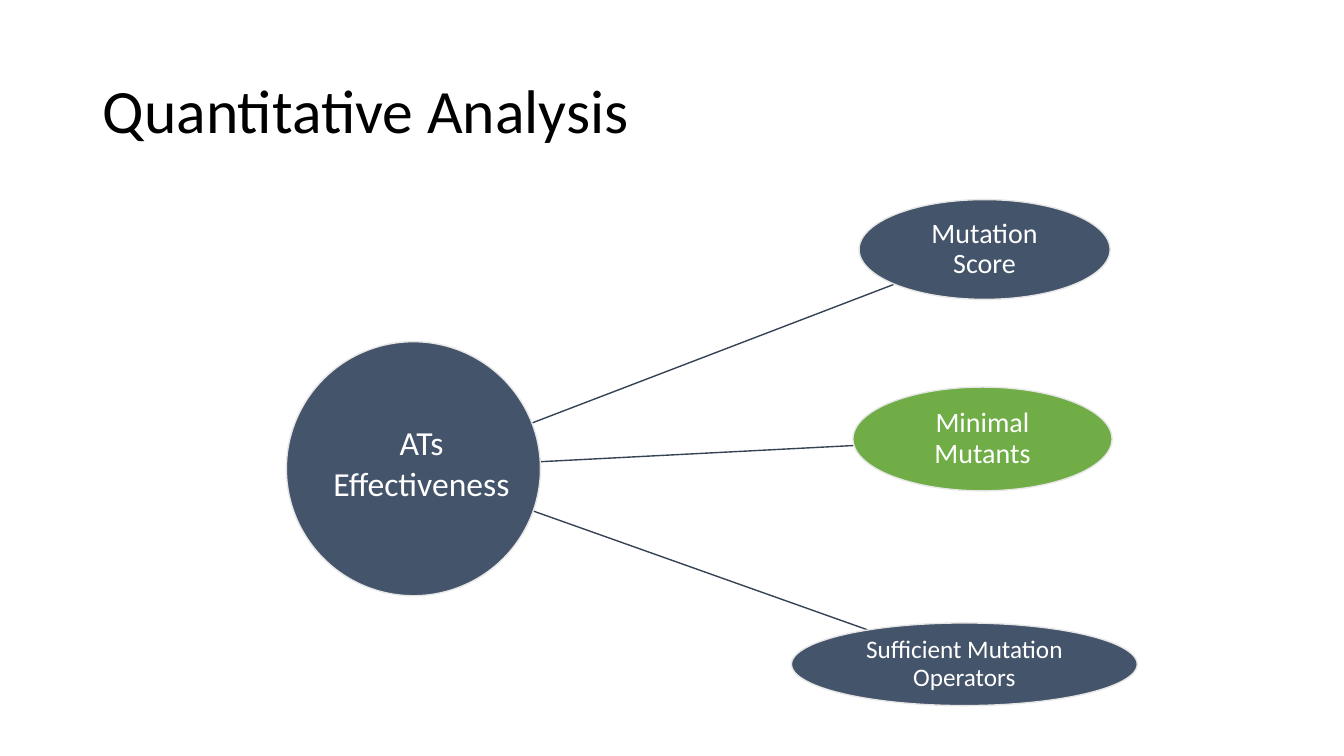
from dataclasses import dataclass

from lxml import etree
from pptx import Presentation
from pptx.dml.color import RGBColor
from pptx.enum.shapes import MSO_CONNECTOR as Connector, MSO_SHAPE as Shape
from pptx.enum.text import MSO_ANCHOR as Anchor, PP_ALIGN as Align
from pptx.oxml.ns import qn
from pptx.util import Pt

PX = 9144  # 100 px to the inch


@dataclass(frozen=True)
class Theme:
    font: str = "Calibri"
    ink: str = "000000"
    white: str = "FFFFFF"
    slate: str = "44546A"
    green: str = "70AD47"
    outline: str = "E7E6E6"
    spoke: str = "364355"
    title_size: int = 44
    hub_size: int = 24
    node_size: int = 20
    small_size: int = 18
    line_width: int = 1


THEME = Theme()

# Label, box (left, top, width, height), fill, type size, spoke (start, end)
NODES = [
    ("Mutation Score", (852, 198, 249, 99), THEME.slate, THEME.node_size,
     ((498, 431), (887, 282))),
    ("Minimal Mutants", (846, 384, 257, 103), THEME.green, THEME.node_size,
     ((498, 460), (847, 442))),
    ("Sufficient Mutation Operators", (785, 618, 343, 82), THEME.slate,
     THEME.small_size, ((498, 496), (861, 625))),
]


def px(*lengths):
    return [length * PX for length in lengths]


def rgb(color):
    return RGBColor.from_string(color)


def write(tf, text, size, color, align=Align.CENTER, spacing=0.9):
    tf.word_wrap = True
    tf.text = text
    p = tf.paragraphs[0]
    p.alignment, p.line_spacing = align, spacing
    p.font.name, p.font.size = THEME.font, Pt(size)
    p.font.color.rgb = rgb(color)


def set_title(slide, text, box):
    sp = slide.shapes.title
    sp.left, sp.top, sp.width, sp.height = px(*box)
    sp.text_frame.vertical_anchor = Anchor.MIDDLE
    write(sp.text_frame, text, THEME.title_size, THEME.ink, Align.LEFT)


def add_spoke(slide, start, end):
    line = slide.shapes.add_connector(Connector.STRAIGHT, *px(*start, *end))
    line.line.color.rgb = rgb(THEME.spoke)
    line.line.width = Pt(THEME.line_width)
    etree.SubElement(line._element.spPr, qn("a:effectLst"))


def add_ellipse(slide, box, fill):
    sp = slide.shapes.add_shape(Shape.OVAL, *px(*box))
    sp.shadow.inherit = False
    sp.fill.solid()
    sp.fill.fore_color.rgb = rgb(fill)
    sp.line.color.rgb = rgb(THEME.outline)
    sp.line.width = Pt(THEME.line_width)
    return sp


def add_node(slide, text, box, fill, size):
    tf = add_ellipse(slide, box, fill).text_frame
    tf.margin_left = tf.margin_right = 4 * PX
    tf.margin_top = tf.margin_bottom = PX
    tf.vertical_anchor = Anchor.MIDDLE
    write(tf, text, size, THEME.white)


def add_label(slide, text, box, size):
    sp = slide.shapes.add_textbox(*px(*box))
    write(sp.text_frame, text, size, THEME.white, spacing=1.0)


def main():
    prs = Presentation()
    prs.slide_width, prs.slide_height = px(1333, 750)
    slide = prs.slides.add_slide(prs.slide_layouts[5])
    set_title(slide, "Quantitative Analysis", (92, 40, 1150, 145))

    # Spokes lie behind the ellipses
    for *_, (start, end) in reversed(NODES):
        add_spoke(slide, start, end)

    # Hub and outer nodes
    add_ellipse(slide, (284, 339, 252, 252), THEME.slate)
    for text, box, fill, size, _ in NODES:
        add_node(slide, text, box, fill, size)
    add_label(slide, "ATs Effectiveness", (317, 414, 202, 91), THEME.hub_size)

    prs.save("out.pptx")


if __name__ == "__main__":
    main()
